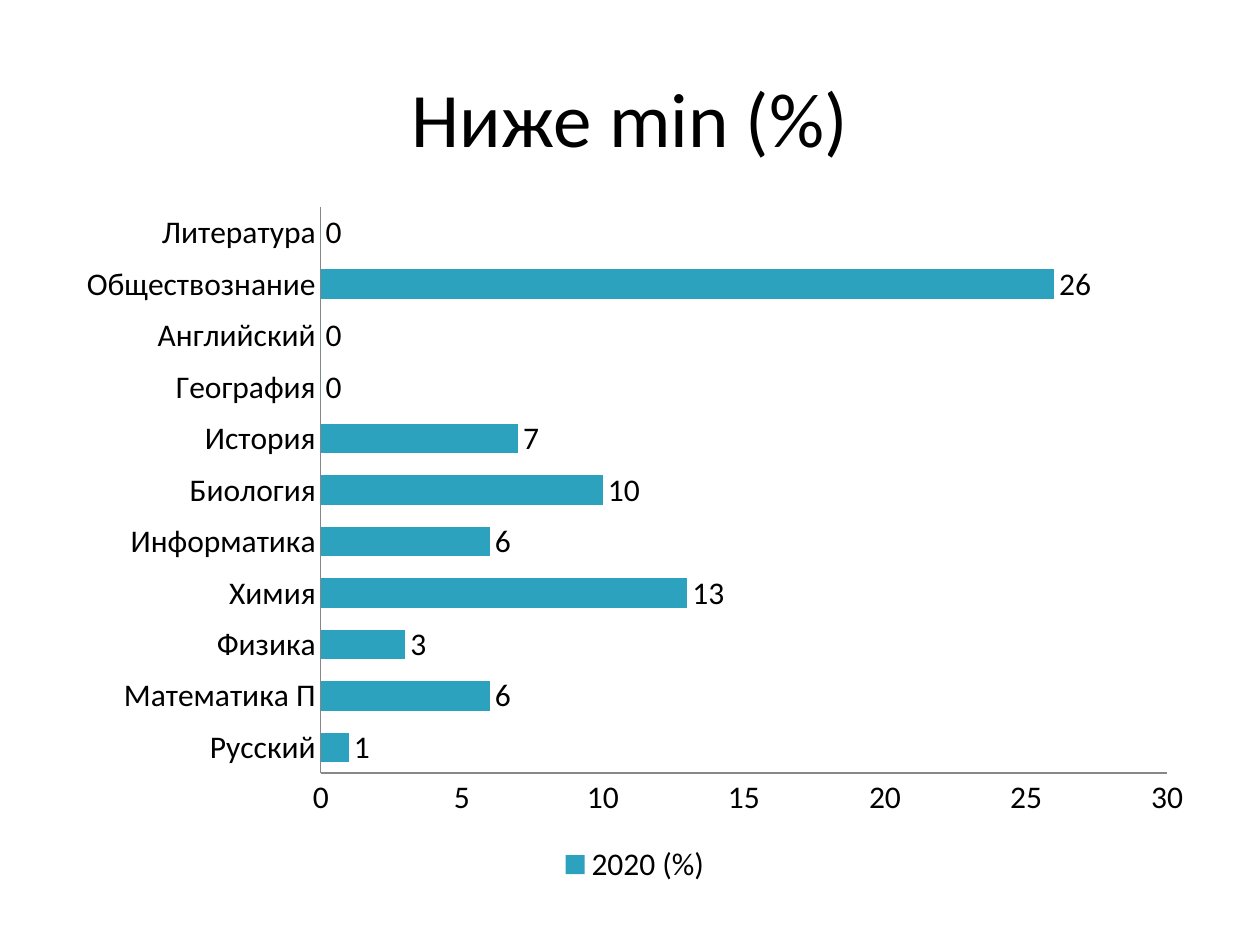
from pptx import Presentation
from pptx.chart.data import CategoryChartData
from pptx.dml.color import RGBColor
from pptx.enum.chart import XL_CHART_TYPE, XL_LABEL_POSITION, XL_LEGEND_POSITION, XL_TICK_MARK
from pptx.enum.text import MSO_ANCHOR, PP_ALIGN
from pptx.util import Emu, Pt

PX_PER_INCH = 126
FONT = "Calibri"
COLORS = {"text": "000000", "bar": "2DA2BF", "axis": "878787"}
BELOW_MINIMUM = {
    "Русский": 1,
    "Математика П": 6,
    "Физика": 3,
    "Химия": 13,
    "Информатика": 6,
    "Биология": 10,
    "История": 7,
    "География": 0,
    "Английский": 0,
    "Обществознание": 26,
    "Литература": 0,
}


def px(length):
    return Emu(round(length * 914400 / PX_PER_INCH))


def color(name):
    return RGBColor.from_string(COLORS[name])


def format_font(font, size):
    font.name = FONT
    font.size = Pt(size)
    font.color.rgb = color("text")


def add_title(slide, text, left, top, width, height):
    title = slide.shapes.title
    title.left, title.top, title.width, title.height = map(px, (left, top, width, height))
    frame = title.text_frame
    frame.text = text
    frame.vertical_anchor = MSO_ANCHOR.MIDDLE
    paragraph = frame.paragraphs[0]
    paragraph.alignment = PP_ALIGN.CENTER
    format_font(paragraph.font, 44)


def format_axis(axis):
    axis.has_major_gridlines = False
    axis.major_tick_mark = XL_TICK_MARK.NONE
    axis.minor_tick_mark = XL_TICK_MARK.NONE
    axis.format.line.color.rgb = color("axis")
    axis.format.line.width = Pt(0.75)


def add_bar_chart(slide, series_name, values, left, top, width, height):
    data = CategoryChartData(number_format="0")
    data.categories = list(values)
    data.add_series(series_name, list(values.values()))
    chart = slide.shapes.add_chart(
        XL_CHART_TYPE.BAR_CLUSTERED, px(left), px(top), px(width), px(height), data
    ).chart
    format_font(chart.font, 18)
    chart.has_title = False

    # Axes
    format_axis(chart.category_axis)
    value_axis = chart.value_axis
    format_axis(value_axis)
    value_axis.minimum_scale = 0
    value_axis.maximum_scale = 30
    value_axis.major_unit = 5
    value_axis.tick_labels.number_format = "0"
    value_axis.tick_labels.number_format_is_linked = False

    # Legend
    chart.has_legend = True
    chart.legend.position = XL_LEGEND_POSITION.BOTTOM
    chart.legend.include_in_layout = False

    # Bars and their labels
    plot = chart.plots[0]
    plot.gap_width = 75
    plot.vary_by_categories = False
    fill = plot.series[0].format.fill
    fill.solid()
    fill.fore_color.rgb = color("bar")
    plot.has_data_labels = True
    labels = plot.data_labels
    labels.show_value = True
    labels.number_format = "0"
    labels.number_format_is_linked = False
    labels.position = XL_LABEL_POSITION.OUTSIDE_END


def main():
    presentation = Presentation()
    presentation.slide_width, presentation.slide_height = px(1260), px(945)
    slide = presentation.slides.add_slide(presentation.slide_layouts[5])
    add_title(slide, "Ниже min (%)", 63, 38, 1134, 157)
    add_bar_chart(slide, "2020 (%)", BELOW_MINIMUM, 64, 193, 1142, 697)
    presentation.save("out.pptx")


if __name__ == "__main__":
    main()
